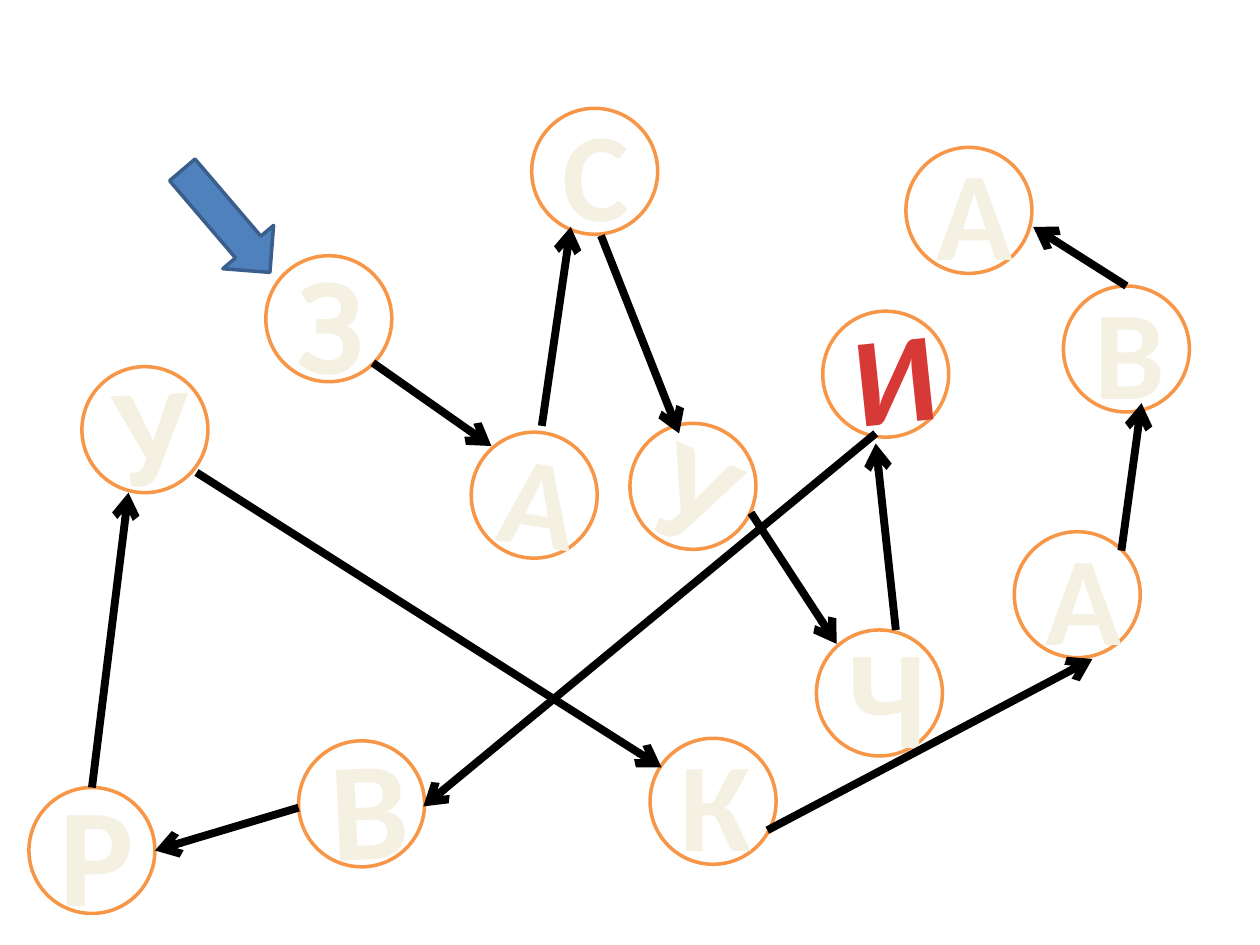
from lxml import etree
from pptx import Presentation
from pptx import util as u
from pptx.dml.color import RGBColor
from pptx.enum import shapes, text
from pptx.oxml.ns import qn

WHITE = RGBColor(0xFF, 0xFF, 0xFF)
BLACK = RGBColor(0, 0, 0)
ORANGE = RGBColor(0xF7, 0x96, 0x46)
CREAM = RGBColor(0xF4, 0xF1, 0xE3)
NAVY = RGBColor(0x05, 0x46, 0x97)
RED = RGBColor(0xD7, 0x3A, 0x36)
BLUE = RGBColor(0x4F, 0x81, 0xBD)
DARK_BLUE = RGBColor(0x3A, 0x5F, 0x8C)

presentation = Presentation()
presentation.slide_width = u.Inches(10)
presentation.slide_height = u.Inches(7.5)
slide = presentation.slides.add_slide(presentation.slide_layouts[6])
column = presentation.slide_width / 10
row = presentation.slide_height / 7.5


def add_preset(preset, left, top, width, height, rotation, fill, line):
    shape = slide.shapes.add_shape(
        preset, int(left * column), int(top * row), int(width * column), int(height * row))
    shape.rotation = rotation
    shape.shadow.inherit = False
    shape.fill.solid()
    shape.fill.fore_color.rgb = fill
    shape.line.color.rgb = line
    shape.line.width = u.Pt(2)
    return shape


def outline_text(run, color, width):
    outline = etree.Element(qn("a:ln"), w=str(u.Pt(width)))
    fill = etree.SubElement(outline, qn("a:solidFill"))
    etree.SubElement(fill, qn("a:srgbClr"), val=str(color))
    run._r.get_or_add_rPr().insert(0, outline)


letters = [
    ("З", 2.11, 2.03, 0, 80),
    ("А", 3.74, 3.43, 8.7, 72),
    ("С", 4.22, 0.86, 0, 72),
    ("У", 5, 3.36, 23.9, 80),
    ("Ч", 6.48, 5, 0, 80),
    ("И", 6.53, 2.47, 353.9, 72),
    ("В", 2.37, 5.88, 357.3, 80),
    ("Р", 0.23, 6.25, 0, 80),
    ("У", 0.65, 2.91, 357.3, 80),
    ("К", 5.16, 5.86, 0, 72),
    ("А", 8.05, 4.22, 0, 72),
    ("В", 8.44, 2.27, 0, 72),
    ("А", 7.19, 1.17, 0, 72),
]
for letter, left, top, rotation, size in letters:
    circle = add_preset(shapes.MSO_SHAPE.OVAL, left, top, 1, 1, rotation, WHITE, ORANGE)
    circle.text_frame.vertical_anchor = text.MSO_ANCHOR.MIDDLE
    paragraph = circle.text_frame.paragraphs[0]
    paragraph.alignment = text.PP_ALIGN.CENTER
    run = paragraph.add_run()
    run.text = letter
    run.font.name = "Calibri"
    run.font.size = u.Pt(size)
    run.font.bold = True
    highlighted = letter == "И"
    run.font.color.rgb = RED if highlighted else CREAM
    outline_text(run, RED if highlighted else NAVY, 1.42 if highlighted else 1)

add_preset(shapes.MSO_SHAPE.DOWN_ARROW, 1.53, 1.22, 0.53, 1.07, 319.5, BLUE, DARK_BLUE)

arrows = [
    (2.96, 2.88, 3.9, 3.54),
    (4.3, 3.38, 4.53, 1.8),
    (4.77, 1.87, 5.39, 3.44),
    (5.96, 4.07, 6.64, 5.11),
    (7.11, 5, 6.95, 3.52),
    (6.95, 3.44, 3.36, 6.4),
    (2.37, 6.41, 1.23, 6.75),
    (0.73, 6.25, 1.02, 3.91),
    (1.56, 3.75, 5.25, 6.09),
    (6.09, 6.59, 8.67, 5.23),
    (8.9, 4.37, 9.06, 3.2),
    (8.94, 2.27, 8.2, 1.8),
]
for start_x, start_y, end_x, end_y in arrows:
    arrow = slide.shapes.add_connector(
        shapes.MSO_CONNECTOR.STRAIGHT,
        int(start_x * column), int(start_y * row), int(end_x * column), int(end_y * row))
    arrow.line.color.rgb = BLACK
    arrow.line.width = u.Pt(4.5)
    etree.SubElement(arrow.line._get_or_add_ln(), qn("a:tailEnd"), type="arrow")
    etree.SubElement(arrow._element.spPr, qn("a:effectLst"))

presentation.save("out.pptx")
